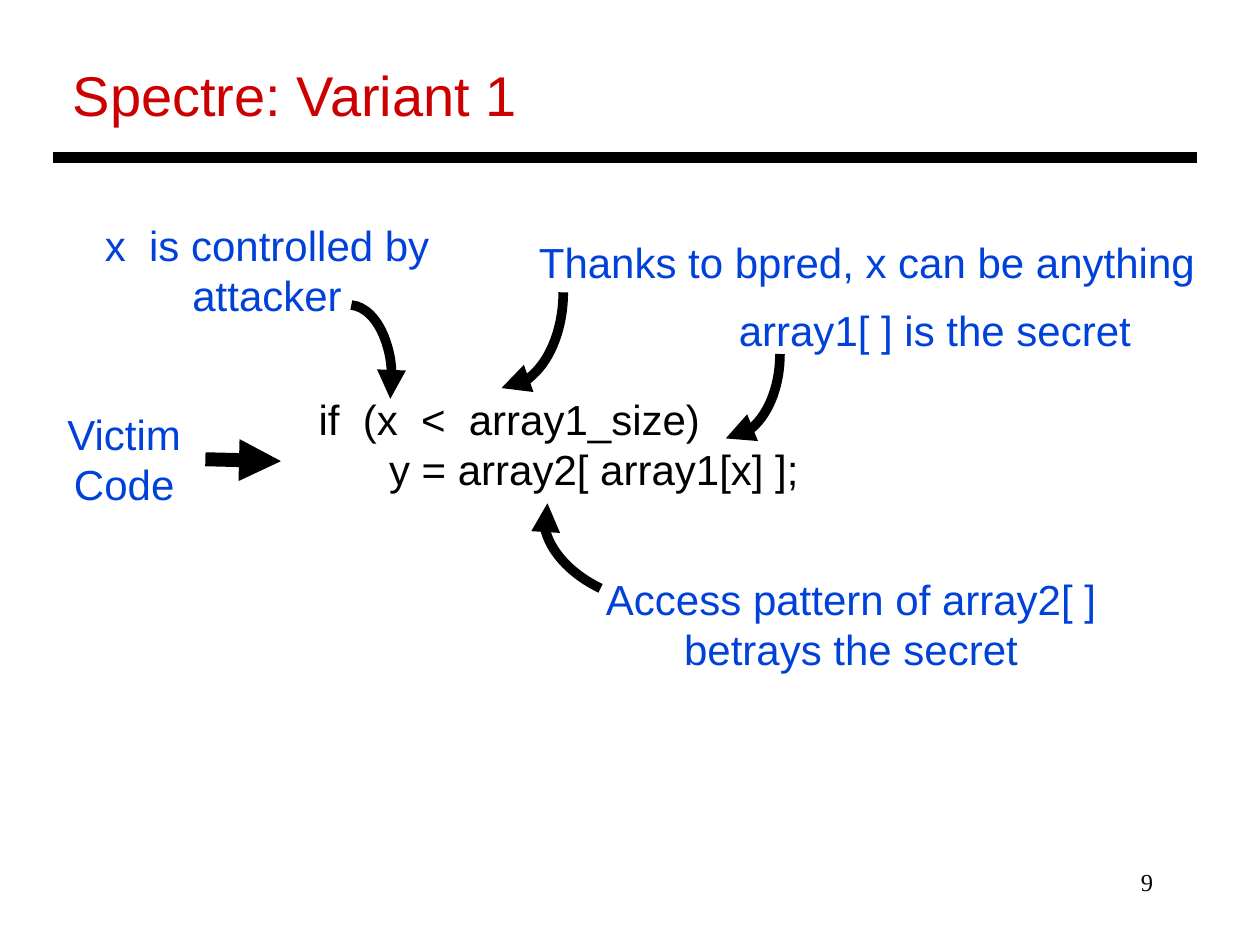
from dataclasses import dataclass

from lxml import etree
from pptx import Presentation
from pptx.dml.color import RGBColor
from pptx.enum import shapes, text
from pptx.oxml.ns import qn
from pptx.util import Inches, Pt


@dataclass(frozen=True)
class Theme:
    black: RGBColor = RGBColor(0x00, 0x00, 0x00)
    red: RGBColor = RGBColor(0xCC, 0x00, 0x00)
    blue: RGBColor = RGBColor(0x00, 0x41, 0xDA)
    font: str = "Arial"
    number_font: str = "Times New Roman"
    title_size: float = 32
    body_size: float = 24
    number_size: float = 14
    rule_width: float = 6
    arrow_width: float = 8
    arc_width: float = 5.5


THEME = Theme()
ALIGN = text.PP_ALIGN


@dataclass(frozen=True)
class Label:
    lines: tuple[str, ...]
    left: float
    top: float
    width: float
    height: float
    color: RGBColor = THEME.blue
    size: float = THEME.body_size
    font: str = THEME.font
    align: text.PP_ALIGN = ALIGN.CENTER
    step: float = 0  # extra left margin of each following line, in inches


@dataclass(frozen=True)
class Arc:
    left: float
    top: float
    width: float
    height: float
    rotation: float = 90
    angles: tuple[float, float] = (162, 0)


TITLE = Label(("Spectre: Variant 1",), 0.48, 0.43, 3.88, 0.64,
              THEME.red, THEME.title_size, align=ALIGN.LEFT)
NUMBER = Label(("9",), 7.17, 6.83, 2.08, 0.5, THEME.black,
               THEME.number_size, THEME.number_font, ALIGN.RIGHT)
CODE = Label(("if  (x  <  array1_size)", "y = array2[ array1[x] ];"),
             2.43, 3.07, 4.04, 0.91, THEME.black, align=ALIGN.LEFT, step=0.56)
VICTIM = Label(("Victim Code",), 0.34, 3.19, 1.29, 0.91)

# Each remark on the code comes with the arc that points from it
REMARKS = (
    (Label(("x  is controlled by attacker",), 0.65, 1.69, 2.94, 0.91),
     Arc(2.43, 2.42, 0.68, 1.18, 0, (163.09, 15.18))),
    (Label(("array1[ ] is the secret",), 5.3, 2.37, 4.24, 0.51),
     Arc(5.09, 2.38, 1.34, 0.86)),
    (Label(("Access pattern of array2[ ] betrays the secret",),
           4.17, 4.5, 5.17, 0.91),
     Arc(4.28, 3.85, 1.34, 0.86, 205.3)),
    (Label(("Thanks to bpred, x can be anything",), 3.39, 1.83, 6.98, 0.51),
     Arc(3.22, 1.83, 1.52, 0.98)),
)


def add_label(slide, label: Label):
    box = slide.shapes.add_textbox(Inches(label.left), Inches(label.top),
                                   Inches(label.width), Inches(label.height))
    frame = box.text_frame
    frame.word_wrap = True
    frame.text = "\n".join(label.lines)
    for index, paragraph in enumerate(frame.paragraphs):
        paragraph.alignment = label.align
        paragraph.font.name = label.font
        paragraph.font.size = Pt(label.size)
        paragraph.font.color.rgb = label.color
        if index and label.step:
            margin = Inches(label.step * index)
            paragraph._p.get_or_add_pPr().set("marL", str(margin))
    return box


def style_line(shape, width: float, arrow: bool = True) -> None:
    shape.line.color.rgb = THEME.black
    shape.line.width = Pt(width)
    if arrow:
        outline = shape.line._get_or_add_ln()
        etree.SubElement(outline, qn("a:tailEnd"), type="triangle")


def add_line(slide, start: tuple[float, float], end: tuple[float, float],
             width: float, arrow: bool = False):
    line = slide.shapes.add_connector(
        shapes.MSO_CONNECTOR.STRAIGHT,
        *(Inches(value) for value in (*start, *end)))
    style_line(line, width, arrow)
    etree.SubElement(line._element.spPr, qn("a:effectLst"))
    return line


def add_arc(slide, arc: Arc) -> None:
    shape = slide.shapes.add_shape(
        shapes.MSO_SHAPE.ARC, Inches(arc.left), Inches(arc.top),
        Inches(arc.width), Inches(arc.height))
    shape.rotation = arc.rotation
    for index, angle in enumerate(arc.angles):
        shape.adjustments[index] = angle
    shape.fill.background()
    style_line(shape, THEME.arc_width)
    shape.shadow.inherit = False


def main() -> None:
    presentation = Presentation()
    presentation.slide_width = Inches(10)
    presentation.slide_height = Inches(7.5)
    slide = presentation.slides.add_slide(presentation.slide_layouts[6])

    # Slide number, title and rule
    add_label(slide, NUMBER)
    add_label(slide, TITLE)
    add_line(slide, (0.42, 1.25), (9.5, 1.25), THEME.rule_width)

    # Victim code with its pointer
    add_label(slide, CODE)
    victim = add_label(slide, VICTIM)
    pointer = add_line(slide, (1.63, 3.65), (2.23, 3.66),
                       THEME.arrow_width, arrow=True)
    pointer.begin_connect(victim, 3)

    # Remarks and their arcs
    for label, arc in REMARKS:
        add_label(slide, label)
        add_arc(slide, arc)

    presentation.save("out.pptx")


if __name__ == "__main__":
    main()
